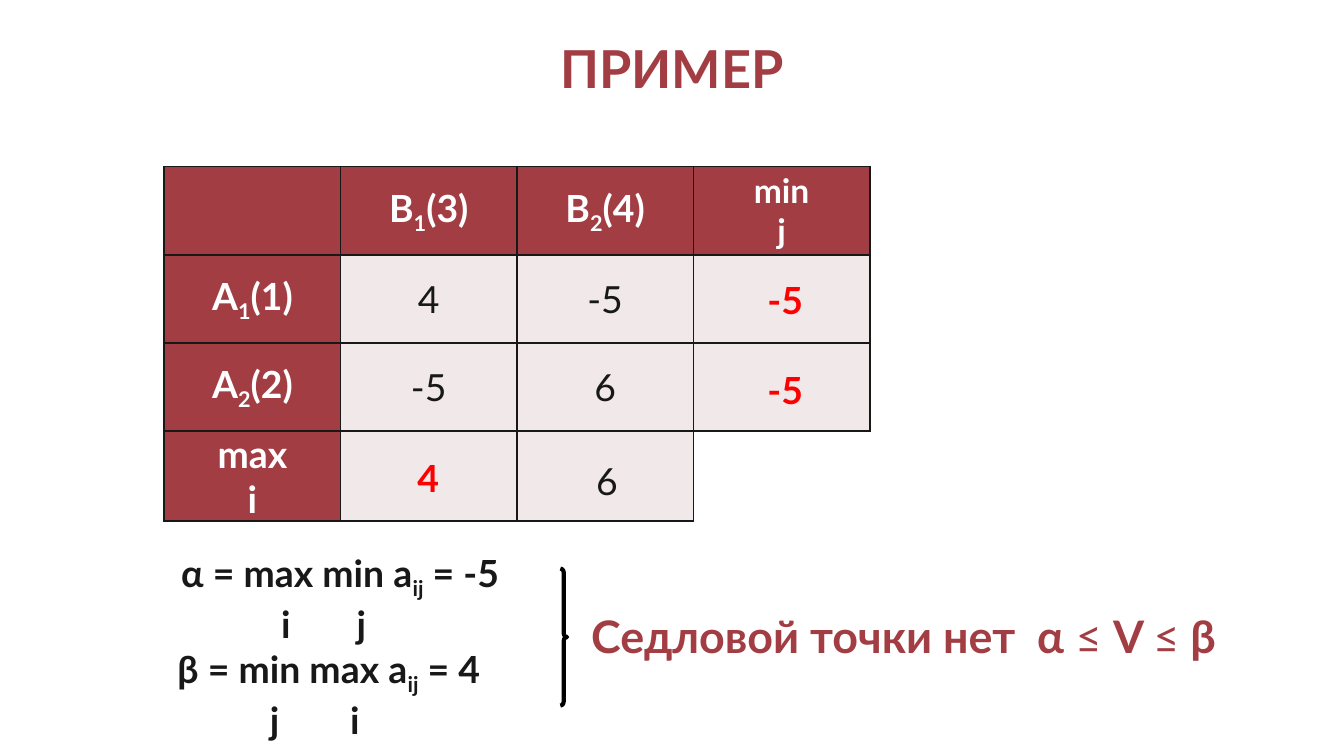
from dataclasses import dataclass
from typing import Optional

import lxml.etree
import pptx
import pptx.dml.color
import pptx.enum.shapes
import pptx.enum.text
import pptx.oxml.ns
import pptx.util

Pt = pptx.util.Pt
Align = pptx.enum.text.PP_ALIGN
Anchor = pptx.enum.text.MSO_ANCHOR


@dataclass(frozen=True)
class Theme:
    font: str = "Lato"
    main: str = "A23E43"
    pale: str = "F0E8E9"
    ink: str = "181818"
    white: str = "FFFFFF"
    red: str = "FF0000"
    brace: str = "000000"
    title: float = 28
    claim: float = 24
    text: float = 20
    small: float = 18


@dataclass(frozen=True)
class Run:
    text: str
    low: bool = False
    bold: Optional[bool] = None


@dataclass(frozen=True)
class Cell:
    lines: tuple = ()
    head: bool = False
    size: float = 20


@dataclass(frozen=True)
class Note:
    left: float
    top: float
    width: float
    height: float
    lines: tuple
    size: float = 20
    color: str = "181818"
    bold: bool = True
    align: Align = Align.LEFT
    tabs: tuple = ()


LOOK = Theme()
LEFT, TOP, COL, ROW, LAST = 88, 89.25, 94.5, 47.25, 48


def rgb(code: str):
    return pptx.dml.color.RGBColor.from_string(code)


def add_xml(parent, tag: str, **attrs: str):
    return lxml.etree.SubElement(parent, pptx.oxml.ns.qn(tag), attrs)


def write(frame, lines: tuple, *, size: float, color: str, bold: bool = False,
          align=Align.LEFT, tabs: tuple = ()) -> None:
    """Fill a text frame; each line is a tuple of runs."""
    for n, line in enumerate(lines):
        para = frame.paragraphs[0] if n == 0 else frame.add_paragraph()
        para.alignment = align
        if tabs:
            stops = add_xml(para._p.get_or_add_pPr(), "a:tabLst")
            for stop in tabs:
                add_xml(stops, "a:tab", pos=str(Pt(stop)), algn="l")
        for item in line:
            run = para.add_run()
            run.text = item.text
            font = run.font
            font.name, font.size = LOOK.font, Pt(size)
            font.bold = bold if item.bold is None else item.bold
            font.color.rgb = rgb(color)
            if item.low:
                font._element.set("baseline", "-25000")


def add_note(slide, note: Note) -> None:
    box = slide.shapes.add_textbox(Pt(note.left), Pt(note.top),
                                   Pt(note.width), Pt(note.height))
    box.text_frame.word_wrap = True
    write(box.text_frame, note.lines, size=note.size, color=note.color,
          bold=note.bold, align=note.align, tabs=note.tabs)


def add_edges(cell) -> None:
    props = cell._tc.get_or_add_tcPr()
    for n, side in enumerate(("a:lnL", "a:lnR", "a:lnT", "a:lnB")):
        edge = lxml.etree.Element(pptx.oxml.ns.qn(side), {"w": str(Pt(1))})
        fill = add_xml(edge, "a:solidFill")
        add_xml(fill, "a:srgbClr", val=LOOK.ink)
        props.insert(n, edge)


def add_grid(slide, left: float, top: float, high: float, rows: tuple) -> None:
    wide = len(rows[0])
    grid = slide.shapes.add_table(len(rows), wide, Pt(left), Pt(top),
                                  Pt(COL * wide), Pt(high * len(rows))).table
    for col in grid.columns:
        col.width = Pt(COL)
    for r, row in enumerate(rows):
        grid.rows[r].height = Pt(high)
        for c, item in enumerate(row):
            cell = grid.cell(r, c)
            cell.fill.solid()
            cell.fill.fore_color.rgb = rgb(LOOK.main if item.head else LOOK.pale)
            cell.margin_left = cell.margin_right = Pt(5)
            cell.margin_top = cell.margin_bottom = 0
            cell.vertical_anchor = Anchor.MIDDLE
            write(cell.text_frame, item.lines, size=item.size,
                  color=LOOK.white if item.head else LOOK.ink,
                  bold=item.head, align=Align.CENTER)
            add_edges(cell)


def plain(*texts: str) -> tuple:
    return tuple((Run(text),) for text in texts)


def index(name: str, low: str, rest: str) -> tuple:
    return Run(name), Run(low, low=True), Run(rest)


def head(name: str, low: str, rest: str) -> Cell:
    return Cell((index(name, low, rest),), head=True)


def main() -> None:
    deck = pptx.Presentation()
    deck.slide_width, deck.slide_height = Pt(720), Pt(405)
    slide = deck.slides.add_slide(deck.slide_layouts[5])

    # Title
    title = slide.shapes.title
    title.left, title.top, title.width, title.height = Pt(36), Pt(10.8), Pt(648), Pt(50.4)
    title.text_frame.auto_size = pptx.enum.text.MSO_AUTO_SIZE.NONE
    title.text_frame.vertical_anchor = Anchor.MIDDLE
    write(title.text_frame, plain("ПРИМЕР"), size=LOOK.title, color=LOOK.main,
          bold=True, align=Align.CENTER)

    # Payoff matrix, row minima and column maxima
    blank = Cell()
    add_grid(slide, LEFT, TOP, ROW, (
        (Cell(head=True), head("B", "1", "(3)"), head("B", "2", "(4)")),
        (head("A", "1", "(1)"), Cell(plain("4")), Cell(plain("-5"))),
        (head("A", "2", "(2)"), Cell(plain("-5")), Cell(plain("6"))),
    ))
    add_grid(slide, LEFT + 3 * COL, TOP, ROW, (
        (Cell(plain("min", "j"), head=True, size=LOOK.small),), (blank,), (blank,)))
    add_grid(slide, LEFT, TOP + 3 * ROW, LAST, (
        (Cell(plain("max", "i"), head=True), blank, blank),))

    # Found values, the two game prices and the conclusion
    claim = (Run("Седловой точки нет\tα"), Run(" ≤ ", bold=False), Run("V "),
             Run("≤", bold=False), Run(" β"))
    notes = (
        Note(404, 144.7, 34, 31.5, plain("-5"), color=LOOK.red),
        Note(404, 193, 34, 31.5, plain("-5"), color=LOOK.red),
        Note(212.4, 240.5, 34, 31.5, plain("4"), color=LOOK.red, align=Align.CENTER),
        Note(308.2, 242, 34, 31.5, plain("6"), bold=False, align=Align.CENTER),
        Note(90, 291, 209.5, 55.5,
             (index("α = max min a", "ij", " = -5"), (Run("\ti\tj"),)), tabs=(53.5, 94)),
        Note(88, 342.7, 209.5, 55.5,
             (index("β = min max a", "ij", " = 4"), (Run("\tj\ti"),)), tabs=(49.5, 92.5)),
        Note(309.6, 322.6, 381.6, 36, (claim,), size=LOOK.claim, color=LOOK.main,
             tabs=(239,)),
    )
    for note in notes:
        add_note(slide, note)

    # Brace joining the prices to the conclusion
    brace = slide.shapes.add_shape(pptx.enum.shapes.MSO_SHAPE.RIGHT_BRACE,
                                   Pt(300.2), Pt(304.6), Pt(3.6), Pt(73.4))
    brace.adjustments[0], brace.adjustments[1] = 0.58, 0.5
    brace.shadow.inherit = False
    brace.fill.background()
    brace.line.color.rgb = rgb(LOOK.brace)
    brace.line.width = Pt(2.25)

    deck.save("out.pptx")


if __name__ == "__main__":
    main()
